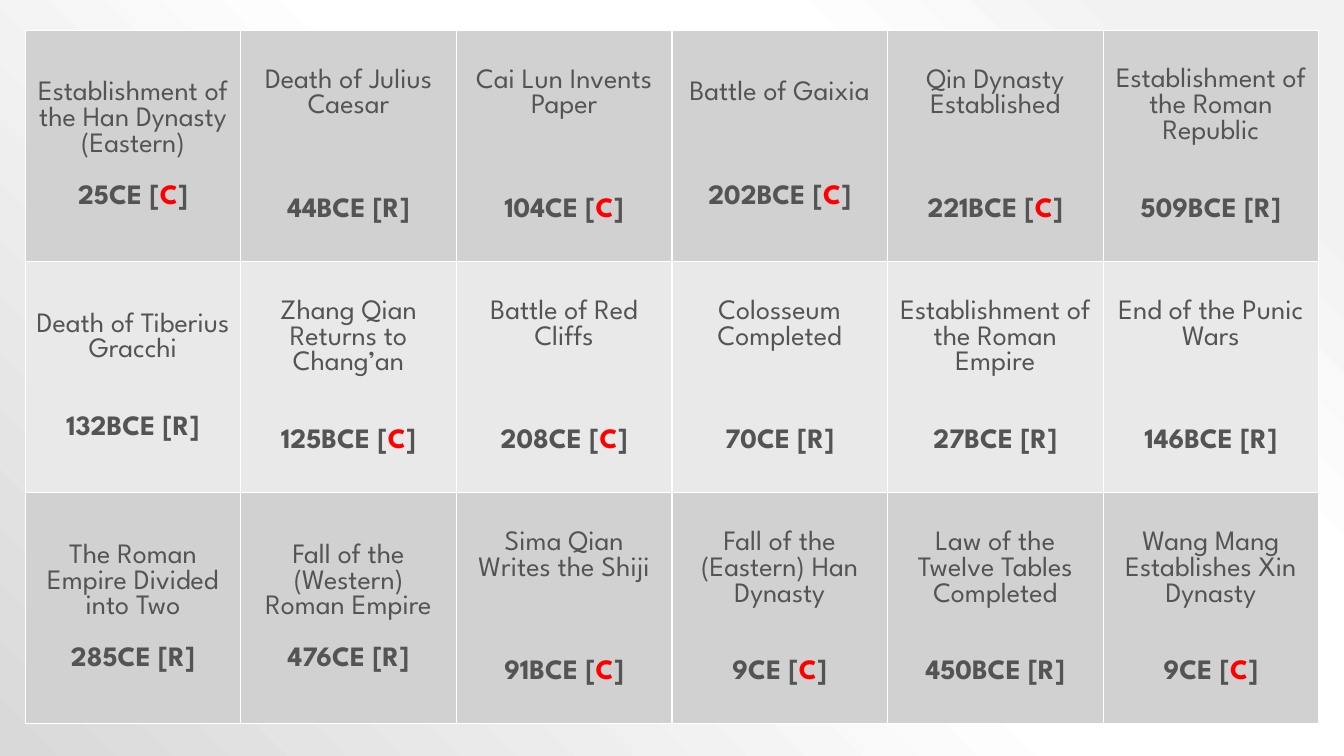
from pptx import Presentation
from pptx import util as u
from pptx.dml.color import RGBColor
from pptx.enum import text
from pptx.oxml import parse_xml
from pptx.oxml.ns import nsdecls

GREY = RGBColor(0x54, 0x54, 0x54)
RED = RGBColor(0xFF, 0x00, 0x00)
WHITE = RGBColor(0xFF, 0xFF, 0xFF)
DARK_BAND = RGBColor(0xD1, 0xD1, 0xD1)
LIGHT_BAND = RGBColor(0xE9, 0xE9, 0xE9)
BACKDROP = [(10, "F2F2F2"), (28, "FFFFFF"), (48, "FFFFFF"), (100, "D9D9D9")]
FONT = "League Spartan"
LINE_PT = 18.4

EVENTS = [
    [("Establishment of the Han Dynasty (Eastern)", "25CE", "C", 1),
     ("Death of Julius Caesar", "44BCE", "R", 3),
     ("Cai Lun Invents Paper", "104CE", "C", 3),
     ("Battle of Gaixia", "202BCE", "C", 3),
     ("Qin Dynasty Established", "221BCE", "C", 3),
     ("Establishment of the Roman Republic", "509BCE", "R", 2)],
    [("Death of Tiberius Gracchi", "132BCE", "R", 2),
     ("Zhang Qian Returns to Chang’an", "125BCE", "C", 2),
     ("Battle of Red Cliffs", "208CE", "C", 3),
     ("Colosseum Completed", "70CE", "R", 3),
     ("Establishment of the Roman Empire", "27BCE", "R", 2),
     ("End of the Punic Wars", "146BCE", "R", 3)],
    [("The Roman Empire Divided into Two", "285CE", "R", 1),
     ("Fall of the (Western) Roman Empire", "476CE", "R", 1),
     ("Sima Qian Writes the Shiji", "91BCE", "C", 3),
     ("Fall of the (Eastern) Han Dynasty", "9CE", "C", 2),
     ("Law of the Twelve Tables Completed", "450BCE", "R", 2),
     ("Wang Mang Establishes Xin Dynasty", "9CE", "C", 2)],
]


def add_run(p, words, size=20, color=GREY, bold=False):
    """Add a formatted run to a paragraph."""
    r = p.add_run()
    r.text = words
    r.font.name = FONT
    r.font.size = u.Pt(size)
    r.font.bold = bold
    r.font.color.rgb = color


def set_background(s):
    """Give the slide a grey gradient that spreads from the top right corner."""
    stops = "".join(f'<a:gs pos="{pos * 1000}"><a:srgbClr val="{color}"/></a:gs>'
                    for pos, color in BACKDROP)
    bg = parse_xml(
        f'<p:bg {nsdecls("p", "a")}><p:bgPr><a:gradFill rotWithShape="1">'
        f'<a:gsLst>{stops}</a:gsLst><a:path path="circle">'
        '<a:fillToRect l="100000" b="100000"/></a:path></a:gradFill>'
        '<a:effectLst/></p:bgPr></p:bg>')
    s.element.cSld.insert(0, bg)


def set_borders(cell, color=WHITE, width=1):
    """Draw a line on all four sides of a cell."""
    tc_pr = cell._tc.get_or_add_tcPr()
    for side in "LRTB":
        tc_pr.append(parse_xml(
            f'<a:ln{side} {nsdecls("a")} w="{u.Pt(width)}"><a:solidFill>'
            f'<a:srgbClr val="{color}"/></a:solidFill></a:ln{side}>'))


def fill_cell(cell, event, band):
    """Write one event with its date and its region mark below."""
    name, date, region, gap = event
    set_borders(cell)
    cell.fill.solid()
    cell.fill.fore_color.rgb = band
    cell.vertical_anchor = text.MSO_ANCHOR.MIDDLE
    tf = cell.text_frame
    title, when = tf.paragraphs[0], tf.add_paragraph()
    title.alignment = when.alignment = text.PP_ALIGN.CENTER
    add_run(title, name)
    when.space_before = u.Pt(gap * LINE_PT)
    if region == "C":
        add_run(when, f"{date} [", bold=True)
        add_run(when, region, color=RED, bold=True)
        add_run(when, "]", bold=True)
    else:
        add_run(when, f"{date} [{region}]", bold=True)


def add_events(s, left, top, width, height):
    """Lay out the event cards as a table of equal cells."""
    rows, cols = len(EVENTS), len(EVENTS[0])
    table = s.shapes.add_table(rows, cols, left, top, width, height).table
    table.first_row = table.horz_banding = False
    for i, row in enumerate(EVENTS):
        band = LIGHT_BAND if i % 2 else DARK_BAND
        for j, event in enumerate(row):
            fill_cell(table.cell(i, j), event, band)


def main():
    """Build the slide and save it."""
    prs = Presentation()
    prs.slide_width, prs.slide_height = u.Inches(13.33), u.Inches(7.5)
    s = prs.slides.add_slide(prs.slide_layouts[6])
    set_background(s)
    add_events(s, u.Inches(0.25), u.Inches(0.3), u.Inches(12.83), u.Inches(6.88))
    prs.save("out.pptx")


if __name__ == "__main__":
    main()
